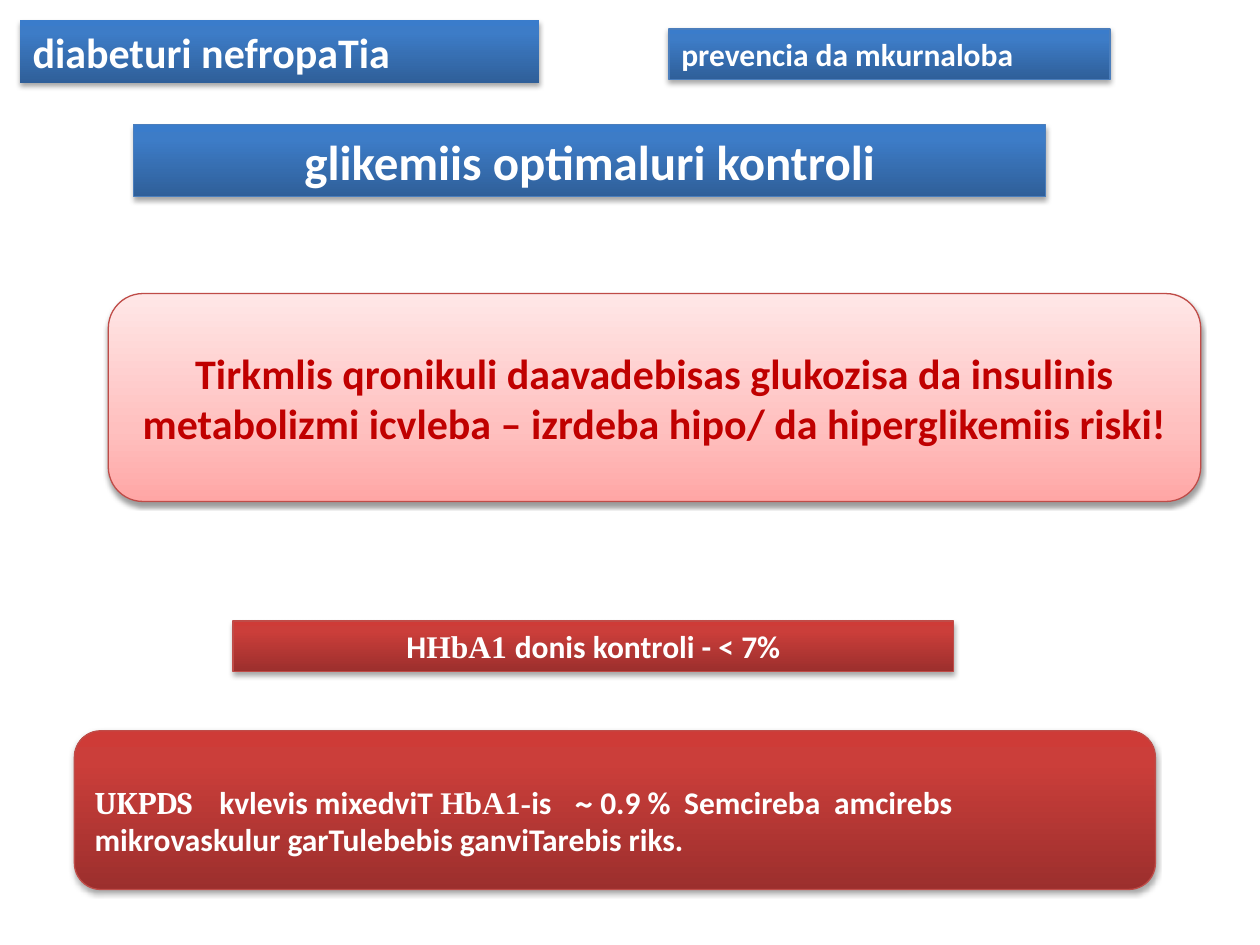
from lxml.etree import SubElement
from pptx import Presentation
from pptx.dml.color import RGBColor
from pptx.enum.shapes import MSO_SHAPE
from pptx.enum.text import MSO_ANCHOR, MSO_AUTO_SIZE, PP_ALIGN
from pptx.oxml.ns import qn
from pptx.util import Inches, Pt

BLUE = [(0, "2F5F99"), (80, "3D7CC7"), (100, "3A7CCB")]
RED = [(0, "9C2F2D"), (80, "CB3E3A"), (100, "CE3B37")]
PINK = [(0, "FFA6A5"), (35, "FFC0BF"), (100, "FFE7E7")]
BLUE_LINE, RED_LINE = "4B7EBC", "BF4C48"


def color(value):
    """Turn a hex string into a colour."""
    return RGBColor.from_string(value)


def add_element(parent, tag, **attributes):
    """Append a DrawingML element with the given attributes."""
    names = {name: str(value) for name, value in attributes.items()}
    return SubElement(parent, qn(tag), names)


def paint(shape, stops, line=None, shadow_alpha=35, shadow_distance=1.8):
    """Give a shape its upward gradient, outline and soft shadow."""
    shape.fill.gradient()
    properties = shape._element.spPr
    stop_list = properties.find(".//" + qn("a:gsLst"))
    for stop in list(stop_list):
        stop_list.remove(stop)
    for position, value in stops:
        stop = add_element(stop_list, "a:gs", pos=position * 1000)
        add_element(stop, "a:srgbClr", val=value)
    properties.find(".//" + qn("a:lin")).set("ang", "16200000")
    if line:
        shape.line.color.rgb = color(line)
        shape.line.width = Pt(0.75)
    else:
        shape.line.fill.background()
    shape.shadow.inherit = False
    shadow = add_element(properties.find(qn("a:effectLst")), "a:outerShdw", blurRad=Pt(3.1),
                         dist=Pt(shadow_distance), dir=5400000, rotWithShape=0)
    black = add_element(shadow, "a:srgbClr", val="000000")
    add_element(black, "a:alpha", val=shadow_alpha * 1000)


def write(shape, runs, size, align=PP_ALIGN.LEFT, value="FFFFFF", tabs=()):
    """Fill a shape with one bold paragraph of (text, font) runs."""
    frame = shape.text_frame
    frame.word_wrap = True
    frame.auto_size = MSO_AUTO_SIZE.NONE
    frame.vertical_anchor = MSO_ANCHOR.MIDDLE
    para = frame.paragraphs[0]
    para.alignment = align
    if tabs:
        tab_list = add_element(para._p.get_or_add_pPr(), "a:tabLst")
        for position in tabs:
            add_element(tab_list, "a:tab", pos=Inches(position), algn="l")
    for text, font in runs:
        span = para.add_run()
        span.text = text
        span.font.name = font
        span.font.size = Pt(size)
        span.font.bold = True
        span.font.color.rgb = color(value)


def add_panel(page, box, kind=MSO_SHAPE.RECTANGLE):
    """Add a preset shape in a box given in inches."""
    return page.shapes.add_shape(kind, *map(Inches, box))


def add_topic(page, box):
    """Add the topic label at the top left."""
    topic = add_panel(page, box)
    paint(topic, BLUE)
    write(topic, [("diabeturi nefropaTia", "Calibri")], 24)


def add_section(page, box):
    """Add the section label at the top right."""
    section = add_panel(page, box)
    paint(section, BLUE, BLUE_LINE)
    write(section, [("prevencia da mkurnaloba", "Calibri")], 18)


def place_title(page, box):
    """Move and format the title placeholder."""
    title = page.shapes.title
    title.left, title.top, title.width, title.height = map(Inches, box)
    paint(title, BLUE, BLUE_LINE)
    write(title, [("glikemiis optimaluri kontroli", "Calibri")], 28, PP_ALIGN.CENTER)


def add_warning(page, box):
    """Add the pink risk warning."""
    warning = add_panel(page, box, MSO_SHAPE.ROUNDED_RECTANGLE)
    paint(warning, PINK, RED_LINE, 38, 1.6)
    text = ("Tirkmlis qronikuli daavadebisas glukozisa da insulinis metabolizmi "
            "icvleba – izrdeba hipo/ da hiperglikemiis riski!")
    write(warning, [(text, "Calibri")], 24, PP_ALIGN.CENTER, "C00000")


def add_target(page, box):
    """Add the red target level bar."""
    target = add_panel(page, box)
    paint(target, RED, RED_LINE)
    runs = [("H", "Calibri"), ("HbA1 ", "Times New Roman"), ("donis kontroli - < 7%", "Calibri")]
    write(target, runs, 18, PP_ALIGN.CENTER)


def add_evidence(page, box):
    """Add the red study result, set below the top edge."""
    evidence = add_panel(page, box, MSO_SHAPE.ROUNDED_RECTANGLE)
    paint(evidence, RED, RED_LINE)
    runs = [("UKPDS\t", "Cambria"), ("kvlevis mixedviT ", "Calibri"),
            ("HbA1-", "Times New Roman"), ("is\t", "Calibri"), ("~", "Cambria"),
            (" 0.9 %\tSemcireba\tamcirebs mikrovaskulur garTulebebis "
             "ganviTarebis riks.", "Calibri")]
    write(evidence, runs, 18, tabs=(0.99, 3.81, 4.68, 5.87))
    evidence.text_frame.vertical_anchor = MSO_ANCHOR.TOP
    evidence.text_frame.margin_top = Inches(0.35)


def main():
    """Build the slide and save the deck."""
    deck = Presentation()
    deck.slide_width, deck.slide_height = Inches(10), Inches(7.5)
    page = deck.slides.add_slide(deck.slide_layouts[5])
    add_section(page, (5.31, 0.23, 3.5, 0.4))
    place_title(page, (1.06, 0.99, 7.24, 0.57))
    add_topic(page, (0.16, 0.16, 4.12, 0.5))
    add_warning(page, (0.86, 2.33, 8.67, 1.65))
    add_target(page, (1.85, 4.93, 5.72, 0.4))
    add_evidence(page, (0.59, 5.8, 8.58, 1.26))
    deck.save("out.pptx")


if __name__ == "__main__":
    main()
